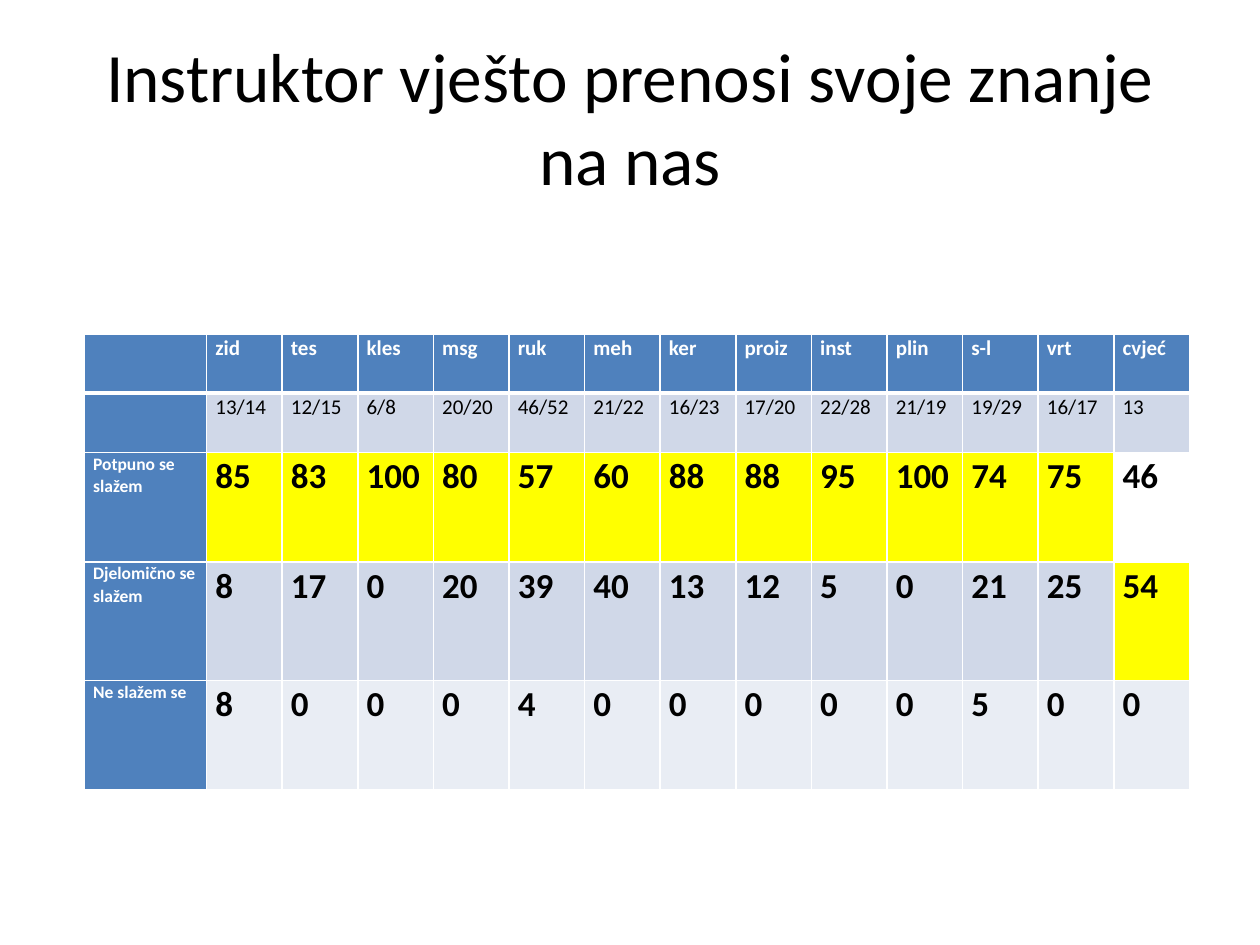
from pptx import Presentation
from pptx.dml.color import RGBColor
from pptx.enum.text import MSO_ANCHOR, PP_ALIGN
from pptx.oxml import parse_xml
from pptx.oxml.ns import nsdecls
from pptx.util import Inches, Pt

COLORS = {
    "text": "000000",
    "white": "FFFFFF",
    "header": "4F81BD",
    "band": "D0D8E8",
    "light": "E9EDF4",
    "highlight": "FFFF00",
}

GROUPS = ["zid", "tes", "kles", "msg", "ruk", "meh", "ker",
          "proiz", "inst", "plin", "s-l", "vrt", "cvjeć"]
RESPONSES = ["13/14", "12/15", "6/8", "20/20", "46/52", "21/22", "16/23",
             "17/20", "22/28", "21/19", "19/29", "16/17", "13"]
ANSWERS = [
    ("Potpuno se slažem", "white",
     [85, 83, 100, 80, 57, 60, 88, 88, 95, 100, 74, 75, 46]),
    ("Djelomično se slažem", "band",
     [8, 17, 0, 20, 39, 40, 13, 12, 5, 0, 21, 25, 54]),
    ("Ne slažem se", "light",
     [8, 0, 0, 0, 4, 0, 0, 0, 0, 0, 5, 0, 0]),
]
ROW_HEIGHTS = [0.47, 0.47, 0.87, 0.94, 0.87]
LABEL_WIDTH, GROUP_WIDTH = 0.97, 0.6


def write_text(frame, text, size, color="text", bold=False,
               align=PP_ALIGN.LEFT, spacing=None, font="Calibri"):
    para = frame.paragraphs[0]
    para.alignment = align
    para.line_spacing = spacing
    span = para.add_run()
    span.text = text
    span.font.name = font
    span.font.size = Pt(size)
    span.font.bold = bold
    span.font.color.rgb = RGBColor.from_string(COLORS[color])


class SlideBuilder:
    def __init__(self, page):
        self.page = page
        self.border_color = COLORS["white"]

    def title(self, text, left, top, width, height):
        box = self.page.shapes.title
        box.left, box.top = Inches(left), Inches(top)
        box.width, box.height = Inches(width), Inches(height)
        frame = box.text_frame
        frame.word_wrap = True
        frame.vertical_anchor = MSO_ANCHOR.MIDDLE
        write_text(frame, text, 39.6, align=PP_ALIGN.CENTER)

    def table(self, left, top, widths, heights):
        table = self.page.shapes.add_table(
            len(heights), len(widths), Inches(left), Inches(top),
            Inches(sum(widths)), Inches(sum(heights))).table
        for column, width in zip(table.columns, widths):
            column.width = Inches(width)
        for row, height in zip(table.rows, heights):
            row.height = Inches(height)
        return table

    def cell(self, cell, text, fill, size=12, color="text", bold=False,
             top_line=1, bottom_line=1):
        cell.margin_left = cell.margin_right = Inches(0.07)
        cell.margin_top = cell.margin_bottom = 0
        self.borders(cell, L=1, R=1, T=top_line, B=bottom_line)
        cell.fill.solid()
        cell.fill.fore_color.rgb = RGBColor.from_string(COLORS[fill])
        if text:
            write_text(cell.text_frame, text, size, color, bold, spacing=1.07)

    def borders(self, cell, **widths):
        properties = cell._tc.get_or_add_tcPr()
        for side, width in widths.items():
            properties.append(parse_xml(
                f'<a:ln{side} {nsdecls("a")} w="{Pt(width)}"><a:solidFill>'
                f'<a:srgbClr val="{self.border_color}"/></a:solidFill></a:ln{side}>'))


def main():
    deck = Presentation()
    deck.slide_width, deck.slide_height = Inches(10), Inches(7.5)
    builder = SlideBuilder(deck.slides.add_slide(deck.slide_layouts[5]))

    builder.title("Instruktor vješto prenosi svoje znanje na nas", 0.5, 0.3, 9, 1.25)

    widths = [LABEL_WIDTH] + [GROUP_WIDTH] * len(GROUPS)
    table = builder.table(0.67, 2.65, widths, ROW_HEIGHTS)

    # Group names and response counts
    for column, name in enumerate([""] + GROUPS):
        builder.cell(table.cell(0, column), name, "header",
                     color="white", bold=True, bottom_line=3)
    for column, count in enumerate([""] + RESPONSES):
        builder.cell(table.cell(1, column), count,
                     "band" if column else "header", top_line=3)

    # Answer shares, with the largest share of each group highlighted
    largest = [max(shares) for shares in zip(*(values for _, _, values in ANSWERS))]
    for row, (label, fill, values) in enumerate(ANSWERS, start=2):
        builder.cell(table.cell(row, 0), label, "header",
                     size=10, color="white", bold=True)
        for column, (value, top_value) in enumerate(zip(values, largest), start=1):
            builder.cell(table.cell(row, column), str(value),
                         "highlight" if value == top_value else fill,
                         size=20, bold=True)

    deck.save("out.pptx")


if __name__ == "__main__":
    main()
